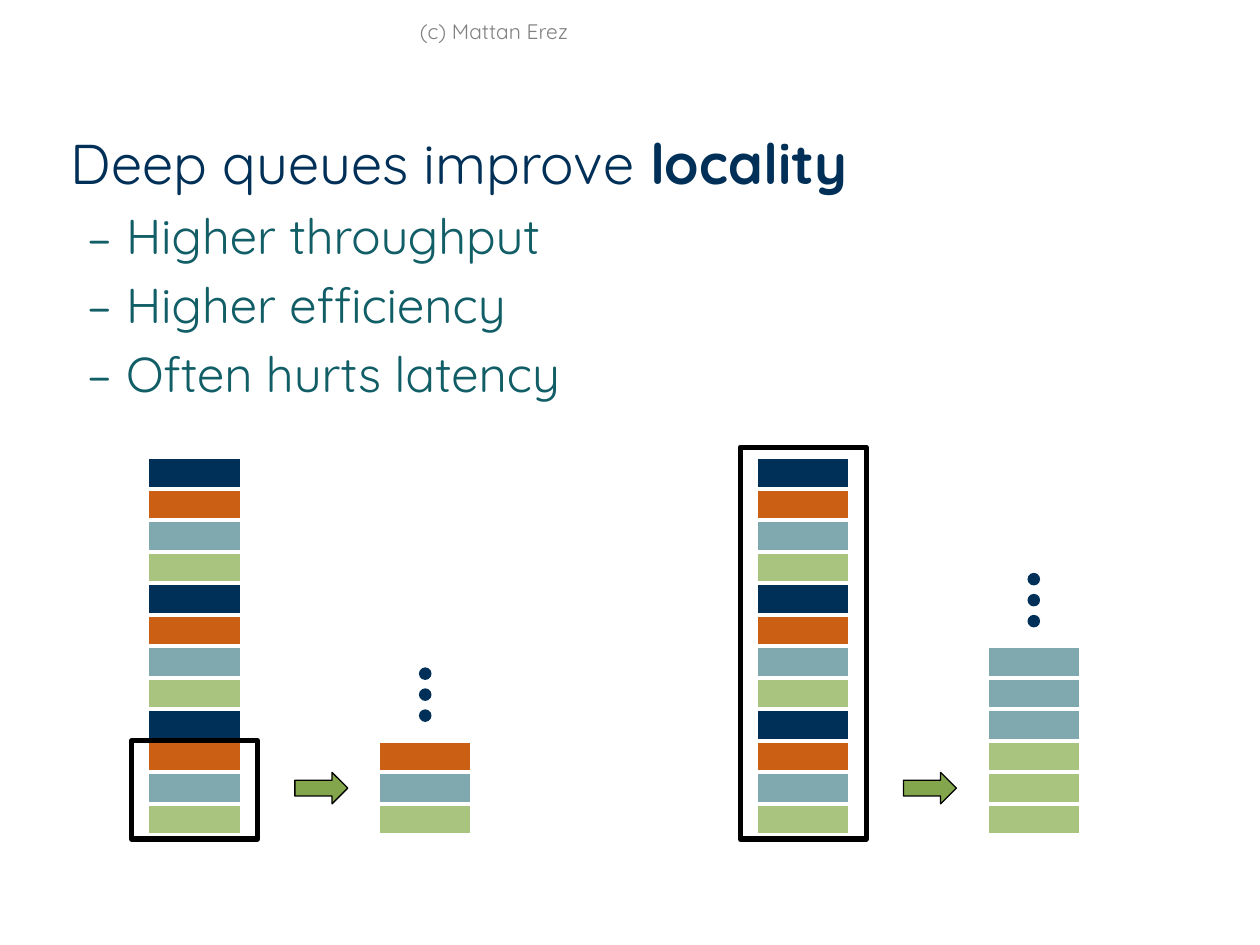
from dataclasses import dataclass
from lxml.etree import SubElement
from pptx import Presentation
from pptx.dml.color import RGBColor
from pptx.enum.shapes import MSO_SHAPE as Preset
from pptx.enum.text import MSO_ANCHOR as Anchor, MSO_AUTO_SIZE as AutoSize, PP_ALIGN as Align
from pptx.oxml.ns import qn
from pptx.util import Inches, Pt


@dataclass(frozen=True)
class Theme:
    font: str = "Quicksand"
    navy: str = "003057"
    orange: str = "CB6015"
    teal: str = "7FA9AE"
    green: str = "A9C47F"
    arrow: str = "83A64C"
    bullet: str = "115E67"
    gray: str = "808080"
    black: str = "000000"
    white: str = "FFFFFF"
    headline_size: int = 32
    bullet_size: int = 28
    credit_size: int = 12


theme = Theme()

# Content
CREDIT = "(c) Mattan Erez"
HEADLINE = [("Deep queues improve ", False), ("locality", True)]
BULLETS = ["Higher throughput", "Higher efficiency", "Often hurts latency"]

# Stacks are listed from the bottom up
QUEUE = [theme.green, theme.teal, theme.orange, theme.navy] * 3
PANELS = [
    {"left": 1.17, "window_top": 5.88, "served": [theme.green, theme.teal, theme.orange]},
    {"left": 6.0, "window_top": 3.55, "served": [theme.green] * 3 + [theme.teal] * 3},
]

# Geometry in inches
BASE, BLOCK_WIDTH, BLOCK_HEIGHT = 6.63, 0.75, 0.25
WINDOW_BOTTOM, WINDOW_WIDTH = 6.66, 1.0
ARROW_OFFSET, SERVED_OFFSET = 1.17, 1.83
DOT_SIZE, DOT_STEP, DOT_GAP = 0.1, 1 / 6, 0.25


def color(value):
    return RGBColor.from_string(value)


def add_run(paragraph, text, size, value, bold=False):
    run = paragraph.add_run()
    run.text = text
    run.font.name = theme.font
    run.font.size = Pt(size)
    run.font.bold = bold
    run.font.color.rgb = color(value)


def set_bullet(paragraph, margin, indent=0.0, mark=None):
    properties = paragraph._p.get_or_add_pPr()
    properties.set("marL", str(Inches(margin)))
    properties.set("indent", str(Inches(indent)))
    if mark is None:
        SubElement(properties, qn("a:buNone"))
        return
    mark_color = SubElement(properties, qn("a:buClr"))
    SubElement(mark_color, qn("a:srgbClr"), val=theme.bullet)
    SubElement(properties, qn("a:buFont"), typeface=theme.font)
    SubElement(properties, qn("a:buChar"), char=mark)


def add_figure(slide, preset, left, top, width, height, fill=None, line=None, weight=0):
    shape = slide.shapes.add_shape(
        preset, Inches(left), Inches(top), Inches(width), Inches(height))
    shape.shadow.inherit = False
    if fill:
        shape.fill.solid()
        shape.fill.fore_color.rgb = color(fill)
    else:
        shape.fill.background()
    if line:
        shape.line.color.rgb = color(line)
        shape.line.width = Pt(weight)
    else:
        shape.line.fill.background()


def add_stack(slide, left, colors):
    for level, fill in enumerate(colors, start=1):
        add_figure(slide, Preset.RECTANGLE, left, BASE - level * BLOCK_HEIGHT,
                   BLOCK_WIDTH, BLOCK_HEIGHT, fill, theme.white, 2.25)


def add_panel(slide, left, window_top, served):
    # Queue with its scheduling window
    add_stack(slide, left, QUEUE)
    window_left = left - (WINDOW_WIDTH - BLOCK_WIDTH) / 2
    add_figure(slide, Preset.RECTANGLE, window_left, window_top,
               WINDOW_WIDTH, WINDOW_BOTTOM - window_top, line=theme.black, weight=3)
    add_figure(slide, Preset.RIGHT_ARROW, left + ARROW_OFFSET, BASE - 2 * BLOCK_HEIGHT,
               0.42, 0.25, theme.arrow, theme.black, 0.75)
    # Served order, continued by dots
    served_left = left + SERVED_OFFSET
    add_stack(slide, served_left, served)
    lowest_dot = BASE - len(served) * BLOCK_HEIGHT - DOT_GAP
    for index in range(3):
        add_figure(slide, Preset.OVAL, served_left + (BLOCK_WIDTH - DOT_SIZE) / 2,
                   lowest_dot - index * DOT_STEP, DOT_SIZE, DOT_SIZE, theme.navy)


def add_body(slide):
    body = slide.placeholders[1]
    body.left, body.top, body.width, body.height = map(Inches, (0.5, 0.75, 9.33, 4.92))
    frame = body.text_frame
    frame.word_wrap = True
    frame.auto_size = AutoSize.NONE
    frame.vertical_anchor = Anchor.TOP
    frame.margin_left = frame.margin_right = frame.margin_bottom = 0
    frame.margin_top = Inches(0.29)

    headline = frame.paragraphs[0]
    headline.line_spacing = 0.99
    headline.space_before = Pt(0)
    set_bullet(headline, 0.06)
    for text, bold in HEADLINE:
        add_run(headline, text, theme.headline_size, theme.navy, bold)

    for text in BULLETS:
        paragraph = frame.add_paragraph()
        paragraph.level = 1
        paragraph.line_spacing = 0.99
        paragraph.space_before = Pt(6)
        set_bullet(paragraph, 0.5, -0.31, "–")
        add_run(paragraph, text, theme.bullet_size, theme.bullet)


def add_credit(slide):
    box = slide.shapes.add_textbox(Inches(0.92), Inches(0), Inches(6), Inches(0.5))
    frame = box.text_frame
    frame.word_wrap = True
    frame.vertical_anchor = Anchor.MIDDLE
    paragraph = frame.paragraphs[0]
    paragraph.alignment = Align.CENTER
    add_run(paragraph, CREDIT, theme.credit_size, theme.gray)


def main():
    presentation = Presentation()
    presentation.slide_width, presentation.slide_height = Inches(10), Inches(7.5)
    slide = presentation.slides.add_slide(presentation.slide_layouts[1])
    # The headline opens the body list, so the title placeholder is unused
    title = slide.shapes.title._element
    title.getparent().remove(title)
    add_body(slide)
    for panel in PANELS:
        add_panel(slide, **panel)
    add_credit(slide)
    presentation.save("out.pptx")


if __name__ == "__main__":
    main()
